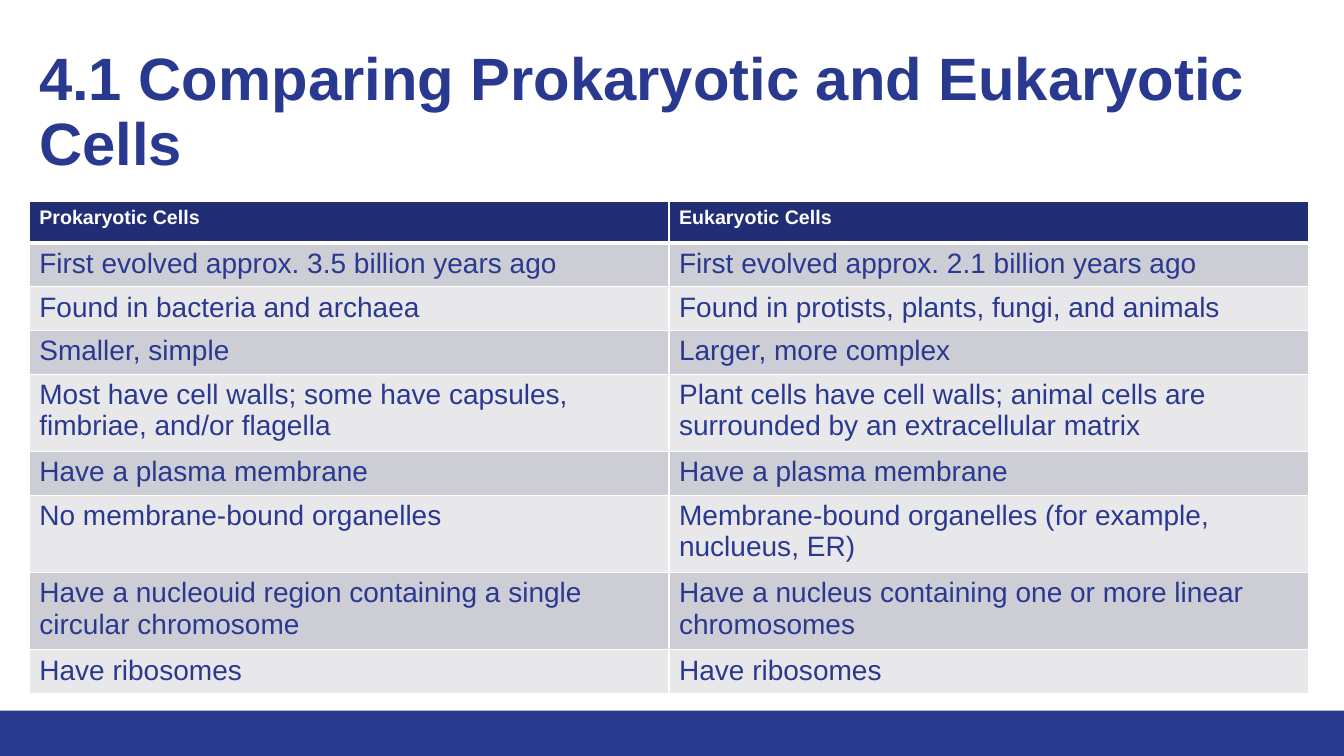
from lxml.etree import SubElement
from pptx import Presentation
from pptx.dml.color import RGBColor
from pptx.enum.shapes import MSO_SHAPE
from pptx.enum.text import MSO_ANCHOR
from pptx.oxml.ns import qn
from pptx.util import Inches, Pt

BLUE = RGBColor(0x2A, 0x39, 0x90)
NAVY = RGBColor(0x21, 0x2D, 0x74)
DARK_BAND = RGBColor(0xCD, 0xCD, 0xD6)
LIGHT_BAND = RGBColor(0xE8, 0xE8, 0xEB)
WHITE = RGBColor(0xFF, 0xFF, 0xFF)

ROWS = [
    ("Prokaryotic Cells", "Eukaryotic Cells"),
    ("First evolved approx. 3.5 billion years ago",
     "First evolved approx. 2.1 billion years ago"),
    ("Found in bacteria and archaea",
     "Found in protists, plants, fungi, and animals"),
    ("Smaller, simple", "Larger, more complex"),
    ("Most have cell walls; some have capsules, fimbriae, and/or flagella",
     "Plant cells have cell walls; animal cells are surrounded by an extracellular matrix"),
    ("Have a plasma membrane", "Have a plasma membrane"),
    ("No membrane-bound organelles",
     "Membrane-bound organelles (for example, nuclueus, ER)"),
    ("Have a nucleouid region containing a single circular chromosome",
     "Have a nucleus containing one or more linear chromosomes"),
    ("Have ribosomes", "Have ribosomes"),
]


def write_text(text_frame, text, size, color=BLUE, bold=False, line_spacing=None):
    paragraph = text_frame.paragraphs[0]
    paragraph.line_spacing = line_spacing
    run = paragraph.add_run()
    run.text = text
    run.font.name = "Arial"
    run.font.size = Pt(size)
    run.font.bold = bold
    run.font.color.rgb = color


def add_borders(cell, bottom, top):
    """Give the cell white borders: 1 pt at the sides, given widths above and below."""
    properties = cell._tc.get_or_add_tcPr()
    for side, width in (("L", 1), ("R", 1), ("T", top), ("B", bottom)):
        line = SubElement(properties, qn(f"a:ln{side}"), w=str(Pt(width)))
        fill = SubElement(line, qn("a:solidFill"))
        SubElement(fill, qn("a:srgbClr"), val=str(WHITE))


presentation = Presentation()
presentation.slide_width = Inches(13.33)
presentation.slide_height = Inches(7.5)
slide = presentation.slides.add_slide(presentation.slide_layouts[6])

footer_bar = slide.shapes.add_shape(
    MSO_SHAPE.RECTANGLE, 0, Inches(7.05), Inches(13.33), Inches(0.45))
footer_bar.shadow.inherit = False
footer_bar.fill.solid()
footer_bar.fill.fore_color.rgb = BLUE
footer_bar.line.fill.background()

title = slide.shapes.add_textbox(Inches(0.29), Inches(0.4), Inches(12.69), Inches(1.45))
title.text_frame.word_wrap = True
title.text_frame.vertical_anchor = MSO_ANCHOR.MIDDLE
write_text(title.text_frame, "4.1 Comparing Prokaryotic and Eukaryotic Cells",
           42.7, bold=True, line_spacing=0.9)

table = slide.shapes.add_table(
    len(ROWS), 2, Inches(0.29), Inches(2), Inches(12.69), Inches(0.41 * len(ROWS))).table
for row_index, row in enumerate(ROWS):
    is_header = row_index == 0
    for column_index, text in enumerate(row):
        cell = table.cell(row_index, column_index)
        add_borders(cell, bottom=3 if is_header else 1, top=3 if row_index == 1 else 1)
        cell.fill.solid()
        if is_header:
            cell.fill.fore_color.rgb = NAVY
            write_text(cell.text_frame, text, 14, color=WHITE, bold=True)
        else:
            cell.fill.fore_color.rgb = DARK_BAND if row_index % 2 else LIGHT_BAND
            write_text(cell.text_frame, text, 20)

presentation.save("out.pptx")
